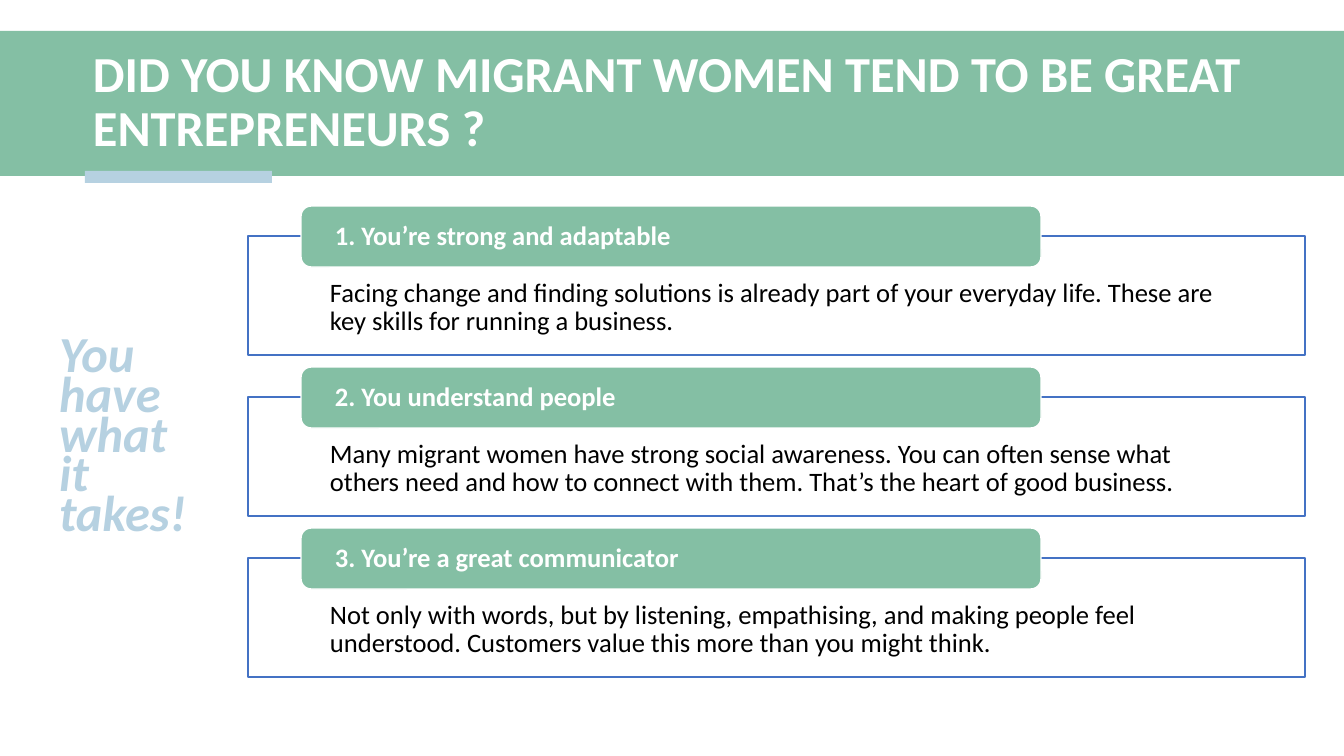
from pptx import Presentation
from pptx.dml.color import RGBColor
from pptx.enum.shapes import MSO_SHAPE as Shape
from pptx.enum.text import MSO_ANCHOR as Anchor, MSO_AUTO_SIZE as AutoSize, PP_ALIGN as Align
from pptx.util import Pt

PX = 914400 / 100.8
GREEN = RGBColor(0x84, 0xBF, 0xA4)
PALE_BLUE = RGBColor(0xB6, 0xD1, 0xE1)
OUTLINE_BLUE = RGBColor(0x44, 0x72, 0xC4)
WHITE = RGBColor(0xFF, 0xFF, 0xFF)
BLACK = RGBColor(0, 0, 0)
TITLE_ONLY = 5

TITLE = "DID YOU KNOW MIGRANT WOMEN TEND TO BE GREAT ENTREPRENEURS ?"
SLOGAN = "You have what it takes!"
STRENGTHS = [
    ("1. You’re strong and adaptable",
     "Facing change and finding solutions is already part of your everyday life. "
     "These are key skills for running a business."),
    ("2. You understand people",
     "Many migrant women have strong social awareness. You can often sense what "
     "others need and how to connect with them. That’s the heart of good business."),
    ("3. You’re a great communicator",
     "Not only with words, but by listening, empathising, and making people feel "
     "understood. Customers value this more than you might think."),
]


def px(*lengths):
    return [round(length * PX) for length in lengths]


def add_block(page, kind, box, fill, line=None):
    block = page.shapes.add_shape(kind, *px(*box))
    block.shadow.inherit = False
    block.fill.solid()
    block.fill.fore_color.rgb = fill
    if line is None:
        block.line.fill.background()
    else:
        block.line.color.rgb = line
        block.line.width = Pt(1)
    return block


def write(shape, text, size, color, bold=False, italic=False,
          anchor=Anchor.MIDDLE, spacing=0.9, insets=(10, 5, 10, 5)):
    frame = shape.text_frame
    frame.text = text
    frame.word_wrap = True
    frame.auto_size = AutoSize.NONE
    frame.vertical_anchor = anchor
    (frame.margin_left, frame.margin_top,
     frame.margin_right, frame.margin_bottom) = px(*insets)
    para = frame.paragraphs[0]
    para.alignment = Align.LEFT
    para.line_spacing = spacing
    font = para.font
    font.name, font.size, font.color.rgb = "Calibri", Pt(size), color
    font.bold, font.italic = bold, italic


def build_header(page, left, top, width, height):
    # Band with the accent bar across its lower edge
    add_block(page, Shape.RECTANGLE, (left, top, width, height), GREEN)
    add_block(page, Shape.RECTANGLE, (left + 85, top + height - 5, 187, 12), PALE_BLUE)
    # Title placeholder, brought in front of the band
    title = page.shapes.title
    title.left, title.top, title.width, title.height = px(left + 83, top + 10, 1237, 124)
    write(title, TITLE, 36, WHITE, bold=True)
    page.shapes._spTree.append(title._element)


def build_slogan(page, left, top, width, height):
    box = page.shapes.add_textbox(*px(left, top, width, height))
    write(box, SLOGAN, 36, PALE_BLUE, bold=True, italic=True,
          anchor=Anchor.TOP, spacing=Pt(28.4))


def build_card(page, left, top, width, height, heading, detail):
    # Outlined panel, starting halfway down the heading tab
    tab_height = 61
    panel_top = top + tab_height // 2
    panel = add_block(page, Shape.RECTANGLE,
                      (left, panel_top, width, top + height - panel_top),
                      WHITE, OUTLINE_BLUE)
    write(panel, detail, 19, BLACK, anchor=Anchor.TOP, insets=(82, 43, 82, 15))
    # Heading tab
    tab = add_block(page, Shape.ROUNDED_RECTANGLE,
                    (left + 53, top, 740, tab_height), GREEN, WHITE)
    write(tab, heading, 19, WHITE, bold=True, insets=(31, 0, 31, 0))


def build_cards(page, left, top, width, height, gap):
    card_height = (height - gap * (len(STRENGTHS) - 1)) // len(STRENGTHS)
    for index, (heading, detail) in enumerate(STRENGTHS):
        card_top = top + index * (card_height + gap)
        build_card(page, left, card_top, width, card_height, heading, detail)


def main():
    deck = Presentation()
    deck.slide_width, deck.slide_height = px(1344, 756)
    page = deck.slides.add_slide(deck.slide_layouts[TITLE_ONLY])
    build_header(page, 0, 31, 1344, 145)
    build_slogan(page, 49, 338, 163, 208)
    build_cards(page, 248, 206, 1057, 471, gap=12)
    deck.save("out.pptx")


if __name__ == "__main__":
    main()
